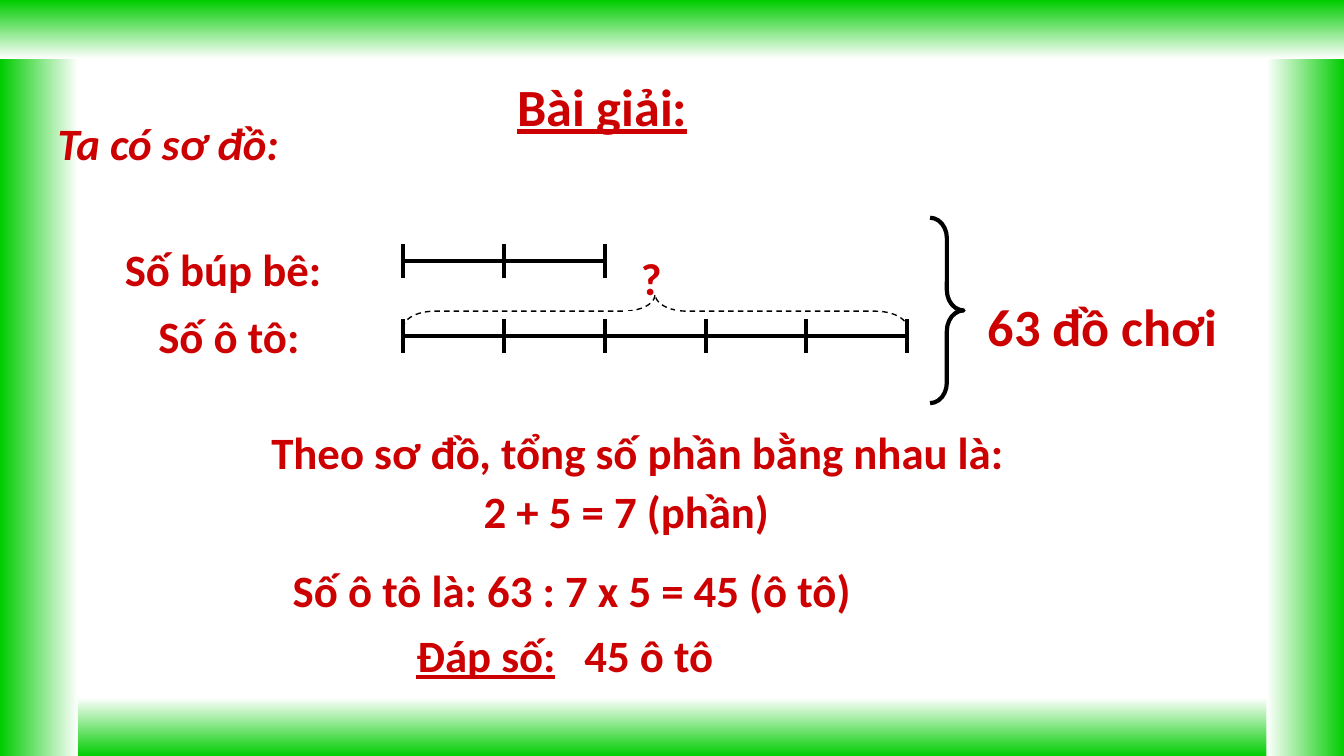
"""Builds a maths solution slide with a segment diagram and gradient borders."""
from lxml import etree
from pptx import Presentation
from pptx.dml.color import RGBColor
from pptx.enum.dml import MSO_LINE
from pptx.enum.shapes import MSO_CONNECTOR, MSO_SHAPE
from pptx.enum.text import MSO_ANCHOR, MSO_AUTO_SIZE, PP_ALIGN
from pptx.oxml.ns import qn
from pptx.util import Inches, Pt

RECTANGLE, BRACE = MSO_SHAPE.RECTANGLE, MSO_SHAPE.RIGHT_BRACE
STRAIGHT, DASH = MSO_CONNECTOR.STRAIGHT, MSO_LINE.DASH
TOP, LEFT, GROW = MSO_ANCHOR.TOP, PP_ALIGN.LEFT, MSO_AUTO_SIZE.SHAPE_TO_FIT_TEXT

COLORS = {"text": "CC0000", "line": "000000", "green": "00CC00", "white": "FFFFFF"}
FONT = "Calibri"
WIDTH = 10
HEIGHT = WIDTH * 9 / 16
BORDERS = [
    (0, 5.19, WIDTH, 0.44, 0),
    (-2.52, 2.52, HEIGHT, 0.58, 90),
    (6.9, 2.52, HEIGHT, 0.58, 270),
    (0, 0, WIDTH, 0.44, 180),
]
DIAGRAM_TEXTS = [
    ("Ta có sơ đồ:", 0.33, 0.81, 2.67, 24, "italic"),
    ("Số búp bê:", 0.83, 1.75, 1.92, 24, None),
    ("63 đồ chơi", 7.25, 2.14, 2.08, 28, None),
    ("Số ô tô:", 1.08, 2.25, 1.83, 24, None),
]
SOLUTION_TEXTS = [
    ("Bài giải:", 3.75, 0.5, 2.17, 28, "underline"),
    ("Theo sơ đồ, tổng số phần bằng nhau là:", 1.92, 3.11, 7.08, 24, None),
    ("2 + 5 = 7 (phần)", 3.5, 3.55, 2.94, 24, None),
    ("Số ô tô là: 63 : 7 x 5 = 45 (ô tô)", 2.08, 4.14, 6.9, 24, None),
    ("Đáp số:", 3, 4.62, 1.93, 24, "underline"),
    ("45 ô tô", 4.25, 4.62, 3.68, 24, None),
]
SEGMENT_BARS = [(1.94, 2), (2.5, 5)]
BAR_LEFT, PART, TICK = 3, 0.75, 0.25
BRACES = [
    (6.92, 1.62, 0.25, 1.38, 0, 0.61, 2.25, None),
    (4.75, 0.44, 0.25, 3.75, 270, 0.94, 0.75, DASH),
]


def color(name):
    return RGBColor.from_string(COLORS[name])


def add_shape(page, kind, left, top, width, height, rotation=0):
    shape = page.shapes.add_shape(kind, *map(Inches, (left, top, width, height)))
    shape.shadow.inherit = False
    shape.rotation = rotation
    return shape


def add_border(page, left, top, width, height, rotation):
    border = add_shape(page, RECTANGLE, left, top, width, height, rotation)
    border.line.fill.background()
    border.fill.gradient()
    border.fill.gradient_angle = 270
    for stop, name in zip(border.fill.gradient_stops, ("white", "green")):
        stop.color.rgb = color(name)


def add_brace(page, left, top, width, height, rotation, curve, weight, dash):
    brace = add_shape(page, BRACE, left, top, width, height, rotation)
    brace.adjustments[0] = curve
    brace.fill.background()
    brace.line.color.rgb = color("line")
    brace.line.width = Pt(weight)
    if dash:
        brace.line.dash_style = dash


def add_line(page, *ends):
    line = page.shapes.add_connector(STRAIGHT, *map(Inches, ends))
    line.line.color.rgb = color("line")
    line.line.width = Pt(2.25)
    etree.SubElement(line._element.spPr, qn("a:effectLst"))


def add_segment_bar(page, middle, parts):
    add_line(page, BAR_LEFT, middle, BAR_LEFT + parts * PART, middle)
    for index in range(parts + 1):
        x = BAR_LEFT + index * PART
        add_line(page, x, middle - TICK / 2, x, middle + TICK / 2)


def write(box, text, size, style=None, wrap=True):
    frame = box.text_frame
    frame.text = text
    frame.word_wrap = wrap
    frame.auto_size = GROW
    frame.vertical_anchor = TOP
    para = frame.paragraphs[0]
    para.alignment = LEFT
    font = para.runs[0].font
    font.name, font.size, font.bold = FONT, Pt(size), True
    font.color.rgb = color("text")
    if style:
        setattr(font, style, True)


def add_text(page, text, left, top, width, size, style):
    height = 0.5 if size == 24 else 0.57
    box = page.shapes.add_textbox(*map(Inches, (left, top, width, height)))
    write(box, text, size, style)


def add_question_mark(page):
    box = add_shape(page, RECTANGLE, 4.67, 1.82, 0.36, 0.5)
    box.fill.background()
    box.line.color.rgb = color("white")
    box.line.width = Pt(0.75)
    write(box, "?", 24, wrap=False)


def main():
    deck = Presentation()
    deck.slide_width, deck.slide_height = Inches(WIDTH), Inches(HEIGHT)
    page = deck.slides.add_slide(deck.slide_layouts[6])
    for border in BORDERS:
        add_border(page, *border)
    for entry in DIAGRAM_TEXTS:
        add_text(page, *entry)
    for bar in SEGMENT_BARS:
        add_segment_bar(page, *bar)
    for brace in BRACES:
        add_brace(page, *brace)
    add_question_mark(page)
    for entry in SOLUTION_TEXTS:
        add_text(page, *entry)
    deck.save("out.pptx")


if __name__ == "__main__":
    main()
